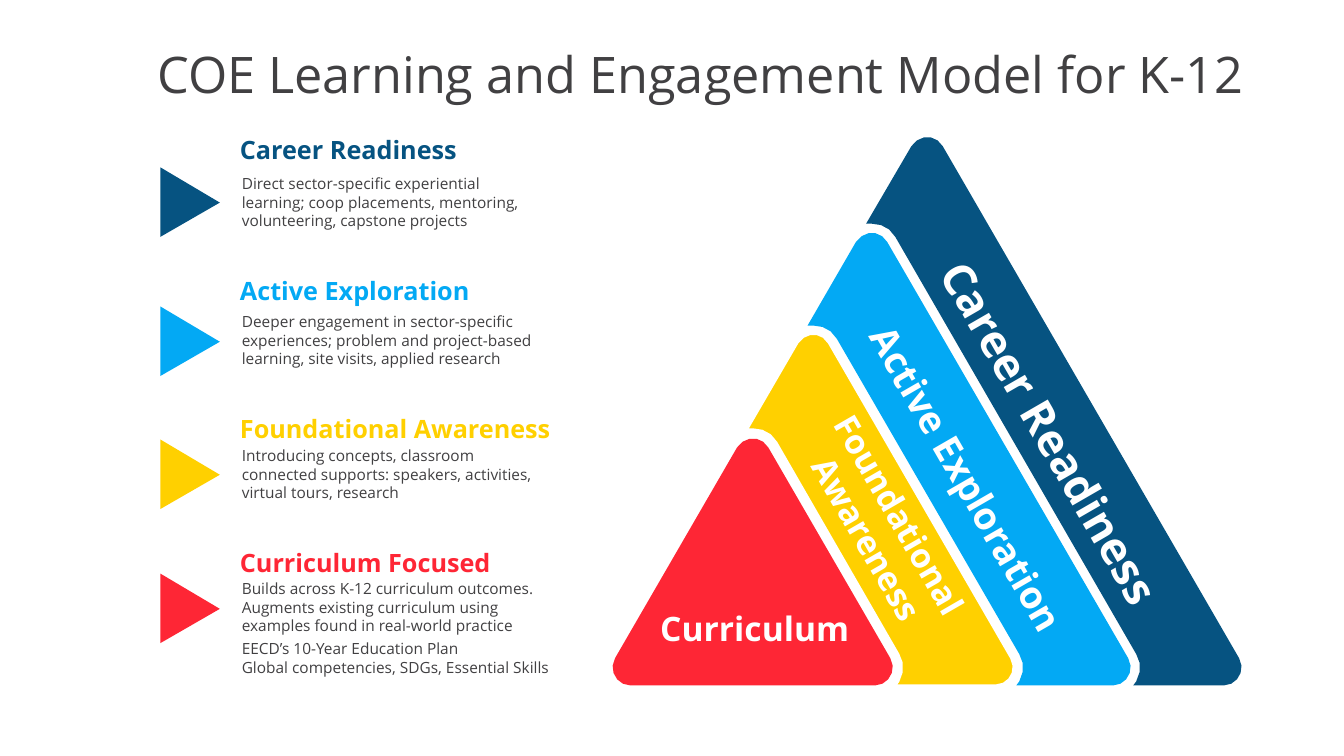
from pptx import Presentation
from pptx.dml.color import RGBColor
from pptx.enum.text import MSO_ANCHOR, MSO_AUTO_SIZE, PP_ALIGN
from pptx.util import Inches, Pt

NAVY = RGBColor(0x06, 0x53, 0x81)
BLUE = RGBColor(0x03, 0xA9, 0xF4)
YELLOW = RGBColor(0xFF, 0xD0, 0x00)
RED = RGBColor(0xFE, 0x26, 0x35)
WHITE = RGBColor(0xFF, 0xFF, 0xFF)
GREY = RGBColor(0x41, 0x40, 0x42)
FONT = "Open Sans"
BASE = 6.8

LEVELS = [
    ("Career Readiness", NAVY, 1.66, 1.33, 1.68,
     ["Direct sector-specific experiential learning; coop placements, mentoring, "
      "volunteering, capstone projects"]),
    ("Active Exploration", BLUE, 3.04, 2.73, 3.05,
     ["Deeper engagement in sector-specific experiences; problem and project-based "
      "learning, site visits, applied research"]),
    ("Foundational Awareness", YELLOW, 4.36, 4.1, 4.38,
     ["Introducing concepts, classroom connected supports: speakers, activities, "
      "virtual tours, research"]),
    ("Curriculum Focused", RED, 5.69, 5.43, 5.7,
     ["Builds across K-12 curriculum outcomes.",
      "Augments existing curriculum using examples found in real-world practice",
      "EECD’s 10-Year Education Plan \vGlobal competencies, SDGs, Essential Skills"]),
]
BANDS = [
    (NAVY, 12.29, 9.2, 1.45, 8.59, 2.22, 11.27),
    (BLUE, 11.19, 8.65, 2.4, 8.01, 3.23, 10.11),
    (YELLOW, 10.03, 8.07, 3.4, 7.41, 4.26, 8.91),
]
BAND_LABELS = [
    ("Career Readiness", 32, (8.49, 4.02, 3.86, 0.54), 60),
    ("Active Exploration", 27, (7.87, 4.52, 3.45, 0.45), 60),
    ("Foundational \vAwareness", 24, (7.61, 4.84, 2.32, 0.81), 60),
    ("Curriculum", 24, (6.54, 6.03, 1.89, 0.4), 0),
]


def write(frame, lines, size, color, bold=False, align=PP_ALIGN.LEFT):
    for index, line in enumerate(lines):
        para = frame.paragraphs[0] if index == 0 else frame.add_paragraph()
        para.text = line
        para.alignment = align
        for span in para.runs:
            span.font.name = FONT
            span.font.size = Pt(size)
            span.font.bold = bold
            span.font.color.rgb = color


def add_text(page, box, lines, size, color, bold=False, align=PP_ALIGN.LEFT,
             margins=(0, 0), wrap=True):
    shape = page.shapes.add_textbox(*map(Inches, box))
    frame = shape.text_frame
    frame.word_wrap = wrap
    frame.auto_size = MSO_AUTO_SIZE.SHAPE_TO_FIT_TEXT
    frame.margin_left = frame.margin_right = Inches(margins[0])
    frame.margin_top = frame.margin_bottom = Inches(margins[1])
    write(frame, lines, size, color, bold, align)
    return shape


def add_outline(page, points, color):
    scaled = [(Inches(x), Inches(y)) for x, y in points]
    builder = page.shapes.build_freeform(*scaled[0], scale=1.0)
    builder.add_line_segments(scaled[1:], close=True)
    shape = builder.convert_to_shape()
    shape.shadow.inherit = False
    shape.fill.solid()
    shape.fill.fore_color.rgb = color
    shape.line.fill.background()
    return shape


def curve(start, first, second, end, steps=5):
    points = []
    for step in range(steps + 1):
        t = step / steps
        weights = ((1 - t) ** 3, 3 * t * (1 - t) ** 2, 3 * t * t * (1 - t), t ** 3)
        points.append(tuple(
            sum(weight * value for weight, value in zip(weights, axis))
            for axis in zip(start, first, second, end)))
    return points


def apex_corner(x, y):
    return curve((x + 0.15, y), (x + 0.08, y - 0.12), (x - 0.08, y - 0.12), (x - 0.16, y))


def base_corner(x, side):
    return curve((x - 0.15 * side, BASE), (x - 0.02 * side, BASE),
                 (x + 0.07 * side, BASE - 0.15), (x, BASE - 0.27))


def add_band(page, color, right, apex, top, left, shoulder, inner):
    notch = curve((left + 0.06, shoulder), (left + 0.15, shoulder),
                  (left + 0.24, shoulder + 0.04), (left + 0.29, shoulder + 0.13), 3)
    foot = curve((inner, BASE - 0.31), (inner + 0.05, BASE - 0.23),
                 (inner + 0.05, BASE - 0.13), (inner, BASE - 0.04), 3)
    points = (apex_corner(apex, top) + [(left, shoulder)] + notch + foot
              + [(inner - 0.03, BASE)] + base_corner(right, 1))
    return add_outline(page, points, color)


def add_pyramid(page):
    for band in BANDS:
        shape = add_band(page, *band)
    shape.line.color.rgb = WHITE
    shape.line.width = Pt(1.5)
    core = apex_corner(7.47, 4.44) + base_corner(6.1, -1)[::-1] + base_corner(8.83, 1)
    add_outline(page, core, RED)
    for label, size, box, angle in BAND_LABELS:
        shape = add_text(page, box, [label], size, WHITE, True, PP_ALIGN.CENTER, wrap=False)
        shape.rotation = angle


def add_level(page, left, heading, color, marker_top, heading_top, body_top, lines):
    marker = [(left, marker_top), (left + 0.59, marker_top + 0.35), (left, marker_top + 0.69)]
    add_outline(page, marker, color)
    add_text(page, (left + 0.79, heading_top, 3.11, 0.3), [heading], 18, color, True)
    width, height = (3.21, 0.66) if len(lines) == 1 else (3.4, 1.07)
    body = add_text(page, (left + 0.71, body_top, width, height), lines, 11, GREY,
                    margins=(0.1, 0.05))
    for para in body.text_frame.paragraphs[2:]:
        para.space_before = Pt(3)


def add_title(page, left, top, width, height):
    title = page.shapes.title
    title.left, title.top = Inches(left), Inches(top)
    title.width, title.height = Inches(width), Inches(height)
    frame = title.text_frame
    frame.auto_size = MSO_AUTO_SIZE.SHAPE_TO_FIT_TEXT
    frame.vertical_anchor = MSO_ANCHOR.TOP
    write(frame, ["COE Learning and Engagement Model for K-12"], 36, GREY)


def main():
    deck = Presentation()
    deck.slide_width, deck.slide_height = Inches(13.33), Inches(7.5)
    page = deck.slides.add_slide(deck.slide_layouts[5])
    add_title(page, 1.46, 0.38, 11.19, 0.71)
    add_pyramid(page)
    for level in LEVELS:
        add_level(page, 1.59, *level)
    deck.save("out.pptx")


if __name__ == "__main__":
    main()
